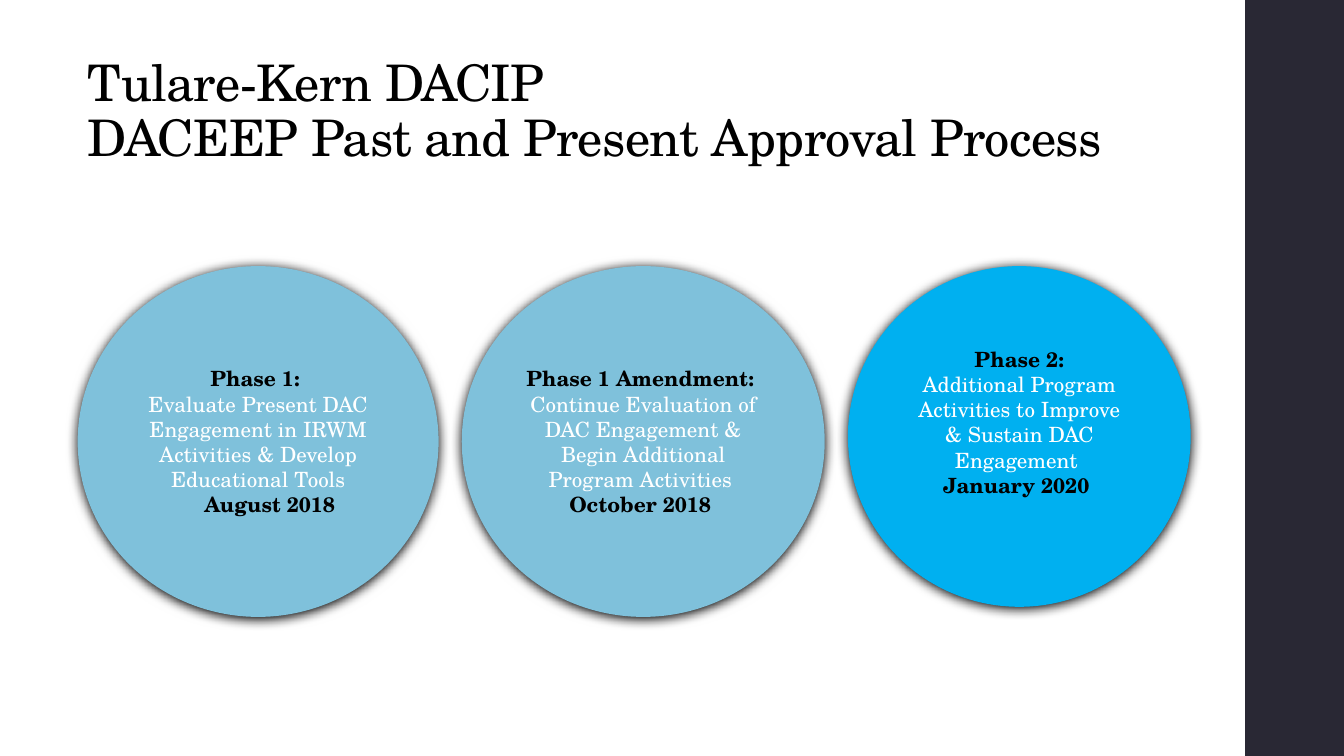
from lxml import etree
from pptx import Presentation
from pptx.dml.color import RGBColor
from pptx.enum.shapes import MSO_SHAPE
from pptx.enum.text import MSO_ANCHOR, PP_ALIGN
from pptx.oxml.ns import qn
from pptx.util import Inches, Pt

RECTANGLE, OVAL = MSO_SHAPE.RECTANGLE, MSO_SHAPE.OVAL
TOP, MIDDLE = MSO_ANCHOR.TOP, MSO_ANCHOR.MIDDLE
CENTER = PP_ALIGN.CENTER
FONT = "TeX Gyre Schola"
COLORS = {
    "sidebar": "292834",
    "past": "7FC1DB",
    "present": "00B0F0",
    "dark": "000000",
    "light": "FFFFFF",
}
CIRCLE_TOP = 2.64


def rgb(name):
    return RGBColor.from_string(COLORS[name])


def style_font(font, size, color, bold=False):
    font.name, font.size, font.bold = FONT, Pt(size), bold
    font.color.rgb = rgb(color)


def add_block(slide, kind, box, color):
    block = slide.shapes.add_shape(kind, *map(Inches, box))
    block.shadow.inherit = False
    block.fill.solid()
    block.fill.fore_color.rgb = rgb(color)
    block.line.fill.background()
    return block


def add_glow_shadow(block):
    effects = block._element.spPr.find(qn("a:effectLst"))
    shadow = etree.SubElement(
        effects, qn("a:outerShdw"), blurRad=str(Pt(8.5)), dist=str(Pt(1)),
        dir="5400000", algn="ctr", rotWithShape="0")
    etree.SubElement(shadow, qn("a:srgbClr"), val=COLORS["dark"])


def add_title(slide, lines):
    title = slide.shapes.add_textbox(
        Inches(0.77), Inches(0.53), Inches(11.28), Inches(1.42))
    frame = title.text_frame
    frame.word_wrap = True
    frame.vertical_anchor = TOP
    paragraph = frame.paragraphs[0]
    paragraph.line_spacing = 0.9
    paragraph.text = "\v".join(lines)
    style_font(paragraph.font, 36, "dark")
    for run in paragraph.runs:
        run.font._element.set("spc", "-50")


def add_phase(slide, left, width, height, color, texts,
              anchor=MIDDLE, top_margin=0.05, date_indent=0):
    circle = add_block(slide, OVAL, (left, CIRCLE_TOP, width, height), color)
    add_glow_shadow(circle)
    frame = circle.text_frame
    frame.word_wrap = True
    frame.vertical_anchor = anchor
    frame.margin_top = Inches(top_margin)
    frame.text = "\n".join(texts)
    phase, activity, date = frame.paragraphs
    for paragraph in (phase, activity, date):
        paragraph.alignment = CENTER
        is_activity = paragraph is activity
        style_font(paragraph.font, 15, "light" if is_activity else "dark",
                   bold=not is_activity)
    if date_indent:
        date._p.get_or_add_pPr().set("marL", str(Inches(date_indent)))


def main():
    prs = Presentation()
    prs.slide_width, prs.slide_height = Inches(13.33), Inches(7.5)
    slide = prs.slides.add_slide(prs.slide_layouts[6])

    # Sidebar and title
    add_block(slide, RECTANGLE, (12.35, 0, 0.98, 7.5), "sidebar")
    add_title(slide, ["Tulare-Kern DACIP ",
                      "DACEEP Past and Present Approval Process"])

    # Approval phases, left to right
    add_phase(slide, 0.77, 3.58, 3.48, "past", [
        "Phase 1: ",
        "Evaluate Present DAC Engagement in IRWM Activities & Develop "
        "Educational Tools",
        "August 2018"], date_indent=0.23)
    add_phase(slide, 4.58, 3.6, 3.48, "past", [
        "Phase 1 Amendment: ",
        "Continue Evaluation of DAC Engagement & Begin Additional "
        "Program Activities ",
        "October 2018 "])
    add_phase(slide, 8.41, 3.4, 3.38, "present", [
        "Phase 2:",
        "Additional Program Activities to Improve & Sustain DAC Engagement ",
        "January 2020 "], anchor=TOP, top_margin=0.3)

    prs.save("out.pptx")


if __name__ == "__main__":
    main()
